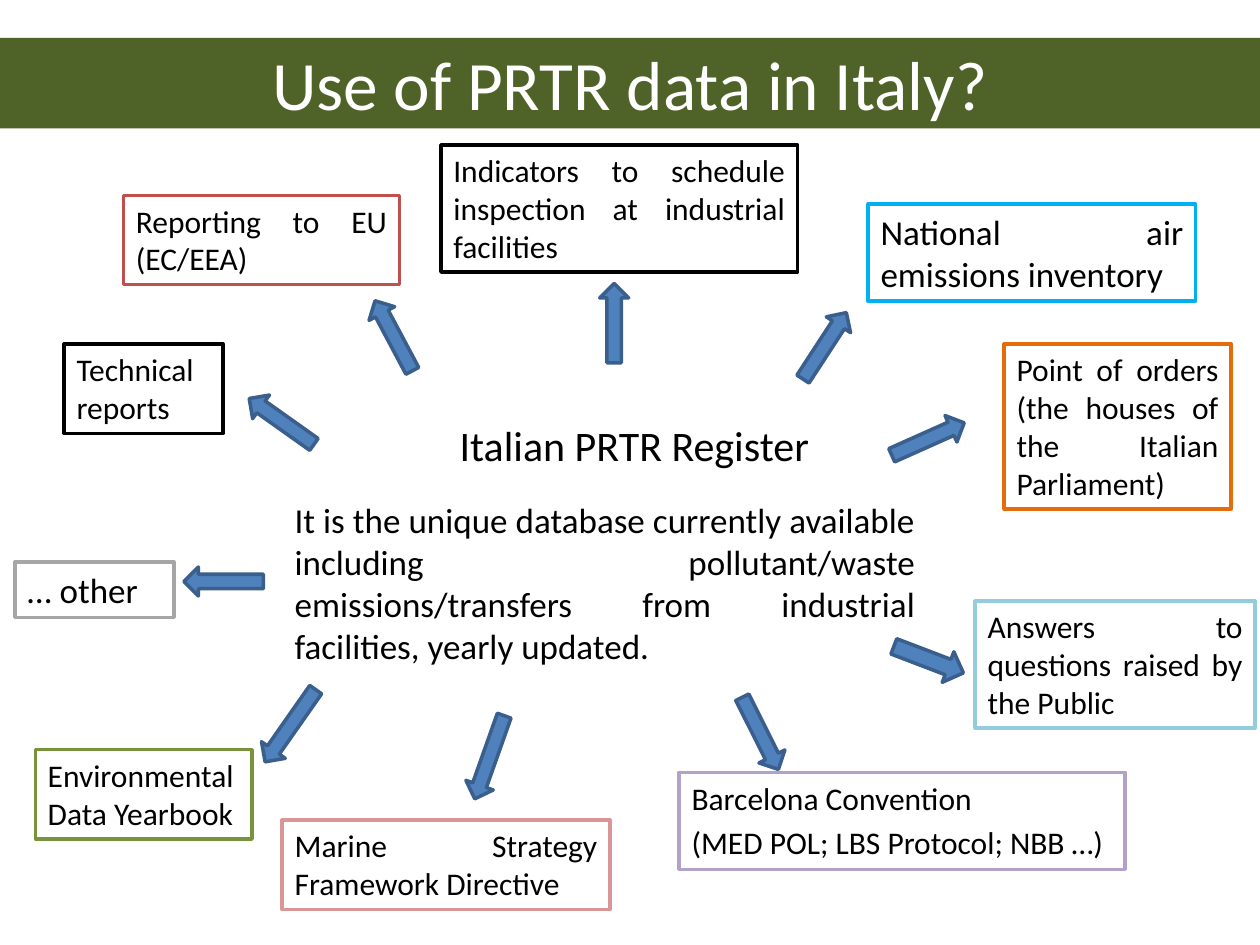
from pptx import Presentation
from pptx.dml.color import RGBColor
from pptx.enum.shapes import MSO_SHAPE
from pptx.enum.text import MSO_ANCHOR, MSO_AUTO_SIZE, PP_ALIGN
from pptx.util import Inches, Pt
from lxml.etree import SubElement
from pptx.oxml.ns import qn

COLORS = {
    "white": "FFFFFF", "black": "000000", "banner": "4F6228",
    "red": "C0504D", "sky": "00B0F0", "green": "77933C",
    "purple": "B3A2C7", "pink": "D99694", "orange": "E46C0A",
    "gray": "A6A6A6", "aqua": "93CDDD",
    "arrow": "4F81BD", "arrow edge": "3A5F8C",
}

presentation = Presentation()
presentation.slide_width, presentation.slide_height = Inches(10), Inches(7.5)
slide = presentation.slides.add_slide(presentation.slide_layouts[1])

# Grid of 100 columns by 75 rows
COLUMN = presentation.slide_width / 100
ROW = presentation.slide_height / 75


def grid(left, top, width, height):
    return (round(left * COLUMN), round(top * ROW),
            round(width * COLUMN), round(height * ROW))


def write(shape, lines, size, align, color="black", anchor=MSO_ANCHOR.TOP):
    frame = shape.text_frame
    frame.text = "\n".join(lines)
    frame.word_wrap = True
    frame.auto_size = MSO_AUTO_SIZE.NONE
    frame.vertical_anchor = anchor
    for number, paragraph in enumerate(frame.paragraphs):
        paragraph.alignment = align
        paragraph.space_before = Pt(size * 0.2 if number else 0)
        paragraph.font.size = Pt(size)
        paragraph.font.name = "Calibri"
        paragraph.font.color.rgb = RGBColor.from_string(COLORS[color])


# Title banner
title = slide.shapes.title
title.left, title.top, title.width, title.height = grid(0, 3, 100, 7.2)
title.fill.solid()
title.fill.fore_color.rgb = RGBColor.from_string(COLORS["banner"])
write(title, ["Use of PRTR data in Italy?"], 39.6, PP_ALIGN.CENTER, "white",
      MSO_ANCHOR.MIDDLE)

# Register name and description in the centre
register = slide.placeholders[1]
register.left, register.top, register.width, register.height = grid(33.5, 32.8, 33.7, 5)
write(register, ["Italian PRTR Register"], 24, PP_ALIGN.CENTER)
properties = register.text_frame.paragraphs[0]._p.get_or_add_pPr()
properties.set("marL", "0")
properties.set("indent", "0")
SubElement(properties, qn("a:buNone"))

description = slide.shapes.add_textbox(*grid(22.4, 39.1, 51.2, 14.5))
write(description, ["It is the unique database currently available including "
                    "pollutant/waste emissions/transfers from industrial "
                    "facilities, yearly updated."], 20, PP_ALIGN.JUSTIFY)

# Uses of the data: place, outline, text size, lines
uses = [
    ((9.8, 15.5, 21.9, 7.1), "red", 18, ["Reporting to EU (EC/EEA)"]),
    ((5.1, 27.3, 12.6, 7.1), "black", 18, ["Technical reports"]),
    ((68.9, 16.2, 26, 7.7), "sky", 20, ["National air emissions inventory"]),
    ((2.8, 59.5, 17.2, 7.1), "green", 18, ["Environmental Data Yearbook"]),
    ((53.9, 61.3, 35.4, 7.7), "purple", 18,
     ["Barcelona Convention", "(MED POL; LBS Protocol; NBB …)"]),
    ((22.4, 65.1, 26, 7.1), "pink", 18, ["Marine Strategy Framework Directive"]),
    ((79.7, 27.3, 18, 13.1), "orange", 18,
     ["Point of orders (the houses of the Italian Parliament)"]),
    ((1.2, 44.6, 12.6, 4.4), "gray", 20, ["… other"]),
    ((77.4, 47.7, 22.2, 10.1), "aqua", 18,
     ["Answers to questions raised by the Public"]),
    ((35, 11.5, 28.3, 10.1), "black", 18,
     ["Indicators to schedule inspection at industrial facilities"]),
]
for place, outline, size, lines in uses:
    box = slide.shapes.add_shape(MSO_SHAPE.RECTANGLE, *grid(*place))
    box.shadow.inherit = False
    box.fill.solid()
    box.fill.fore_color.rgb = RGBColor.from_string(COLORS["white"])
    box.line.color.rgb = RGBColor.from_string(COLORS[outline])
    box.line.width = Pt(2)
    write(box, lines, size, PP_ALIGN.JUSTIFY)

# Arrows from the register to each use: place, rotation
UP, DOWN = MSO_SHAPE.UP_ARROW, MSO_SHAPE.DOWN_ARROW
arrows = [
    (DOWN, (59.2, 55, 2.3, 6.4), 333.4),
    (DOWN, (72.4, 49.4, 2.6, 5.9), 290.9),
    (UP, (72.5, 31.7, 2.3, 6.3), 65.9),
    (UP, (30.1, 23.5, 2.3, 6.3), 332),
    (DOWN, (21.9, 54.1, 2.3, 7), 35),
    (UP, (64.3, 24.3, 2.3, 6.3), 33.1),
    (UP, (21.2, 30.3, 2.3, 6.3), 305.4),
    (UP, (16.6, 43, 2.3, 6.3), 270),
    (DOWN, (37.7, 56.6, 2.3, 7), 19.5),
    (UP, (47.6, 22.5, 2.3, 6.3), 0),
]
for kind, place, rotation in arrows:
    arrow = slide.shapes.add_shape(kind, *grid(*place))
    arrow.rotation = rotation
    arrow.shadow.inherit = False
    arrow.fill.solid()
    arrow.fill.fore_color.rgb = RGBColor.from_string(COLORS["arrow"])
    arrow.line.color.rgb = RGBColor.from_string(COLORS["arrow edge"])
    arrow.line.width = Pt(2)

presentation.save("out.pptx")
